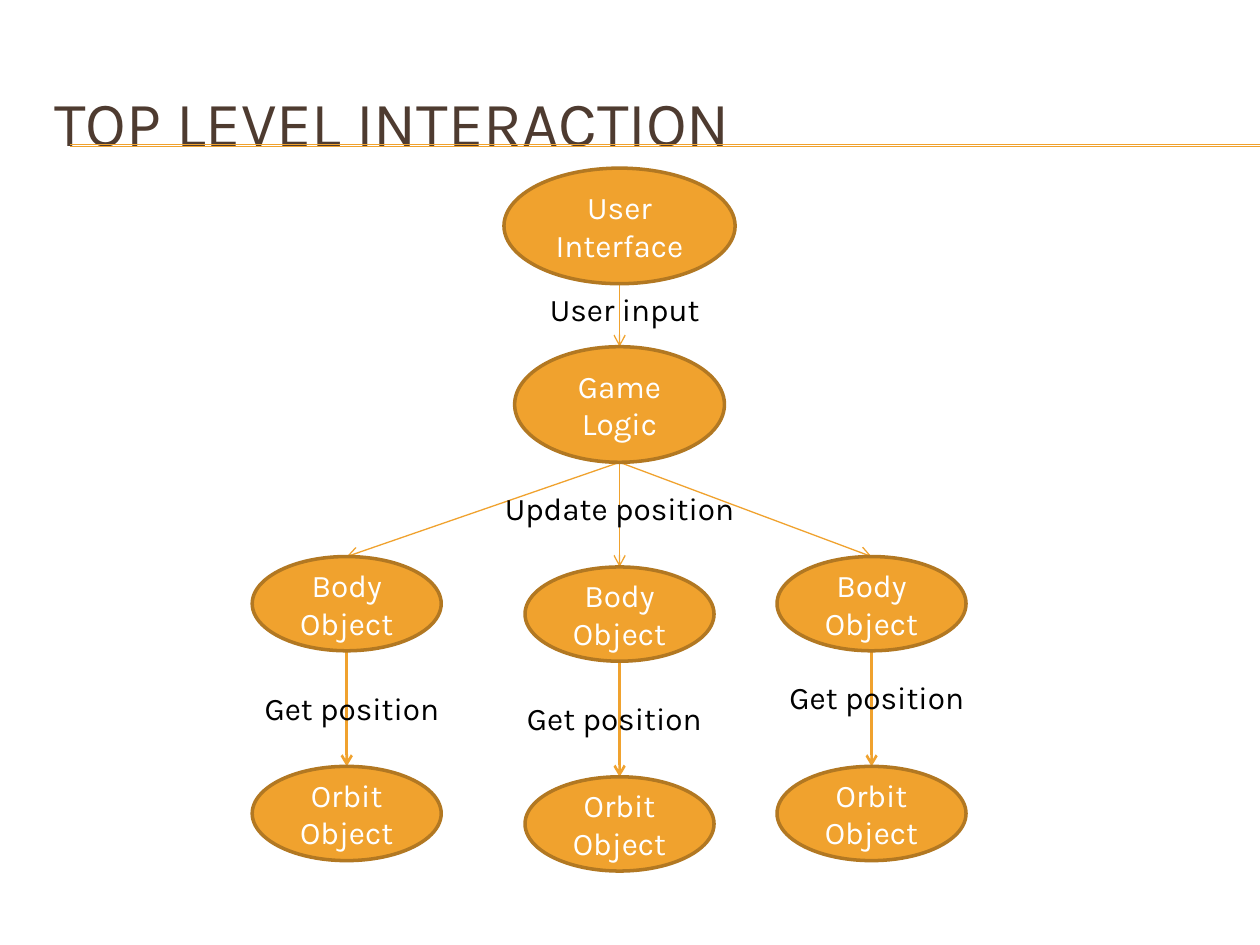
from pptx import Presentation
from pptx.dml.color import RGBColor
from pptx.enum.shapes import MSO_CONNECTOR, MSO_SHAPE
from pptx.enum.text import MSO_ANCHOR, PP_ALIGN
from pptx.oxml.ns import qn
from pptx.util import Cm, Pt
from lxml.etree import SubElement


def write(sp, text, size=18, color="000000", align=PP_ALIGN.CENTER, anchor=MSO_ANCHOR.TOP):
    tf = sp.text_frame
    tf.word_wrap = True
    tf.vertical_anchor = anchor
    p = tf.paragraphs[0]
    p.alignment = align
    r = p.add_run()
    r.text = text
    r.font.name = "Karla"
    r.font.size = Pt(size)
    r.font.color.rgb = RGBColor.from_string(color)


def add_line(s, x1, y1, x2, y2, width=0.75, arrow=True):
    cn = s.shapes.add_connector(MSO_CONNECTOR.STRAIGHT, Cm(x1), Cm(y1), Cm(x2), Cm(y2))
    cn.line.color.rgb = RGBColor.from_string("F0A22E")
    cn.line.width = Pt(width)
    if arrow:
        SubElement(cn.line._get_or_add_ln(), qn("a:tailEnd"), type="arrow")
    SubElement(cn._element.spPr, qn("a:effectLst"))


prs = Presentation()
prs.slide_width, prs.slide_height = Cm(25.4), Cm(19.05)
s = prs.slides.add_slide(prs.slide_layouts[5])

for y in (2.92, 2.95):
    add_line(s, 1.42, y, 25.4, y, arrow=False)

title = s.shapes.title
title.left, title.top, title.width, title.height = Cm(0.84), Cm(1.27), Cm(24.13), Cm(2.34)
write(title, "TOP LEVEL INTERACTION", size=36, color="4E3B30",
      align=PP_ALIGN.LEFT, anchor=MSO_ANCHOR.MIDDLE)

mid = 12.49
node_w, node_h, big_h = 3.81, 1.9, 2.33
ui_top, logic_top, orbit_gap = 3.39, 6.99, 4.23
logic_bottom = logic_top + big_h

nodes = [("User Interface", mid, ui_top, 4.66, big_h),
         ("Game Logic", mid, logic_top, 4.23, big_h)]
labels = [("User input", 10.37, 5.72, 4.45),
          ("Update position", 9.74, 9.74, 5.5)]
add_line(s, mid, ui_top + big_h, mid, logic_top)

columns = [(6.99, 11.22, 4.87, 13.76),
           (mid, 11.43, 10.16, 13.97),
           (17.57, 11.22, 15.45, 13.55)]
for x, body_top, label_left, label_top in columns:
    orbit_top = body_top + orbit_gap
    nodes.append(("Body Object", x, body_top, node_w, node_h))
    nodes.append(("Orbit Object", x, orbit_top, node_w, node_h))
    labels.append(("Get position", label_left, label_top, 4.45))
    add_line(s, mid, logic_bottom, x, body_top)
    add_line(s, x, body_top + node_h, x, orbit_top, width=1.5)

for text, x, top, w, h in nodes:
    sp = s.shapes.add_shape(MSO_SHAPE.OVAL, Cm(x - w / 2), Cm(top), Cm(w), Cm(h))
    sp.shadow.inherit = False
    sp.fill.solid()
    sp.fill.fore_color.rgb = RGBColor.from_string("F0A22E")
    sp.line.color.rgb = RGBColor.from_string("B27822")
    sp.line.width = Pt(2)
    write(sp, text, color="FFFFFF", anchor=MSO_ANCHOR.MIDDLE)

for text, left, top, w in labels:
    write(s.shapes.add_textbox(Cm(left), Cm(top), Cm(w), Cm(1.02)), text)

prs.save("out.pptx")
